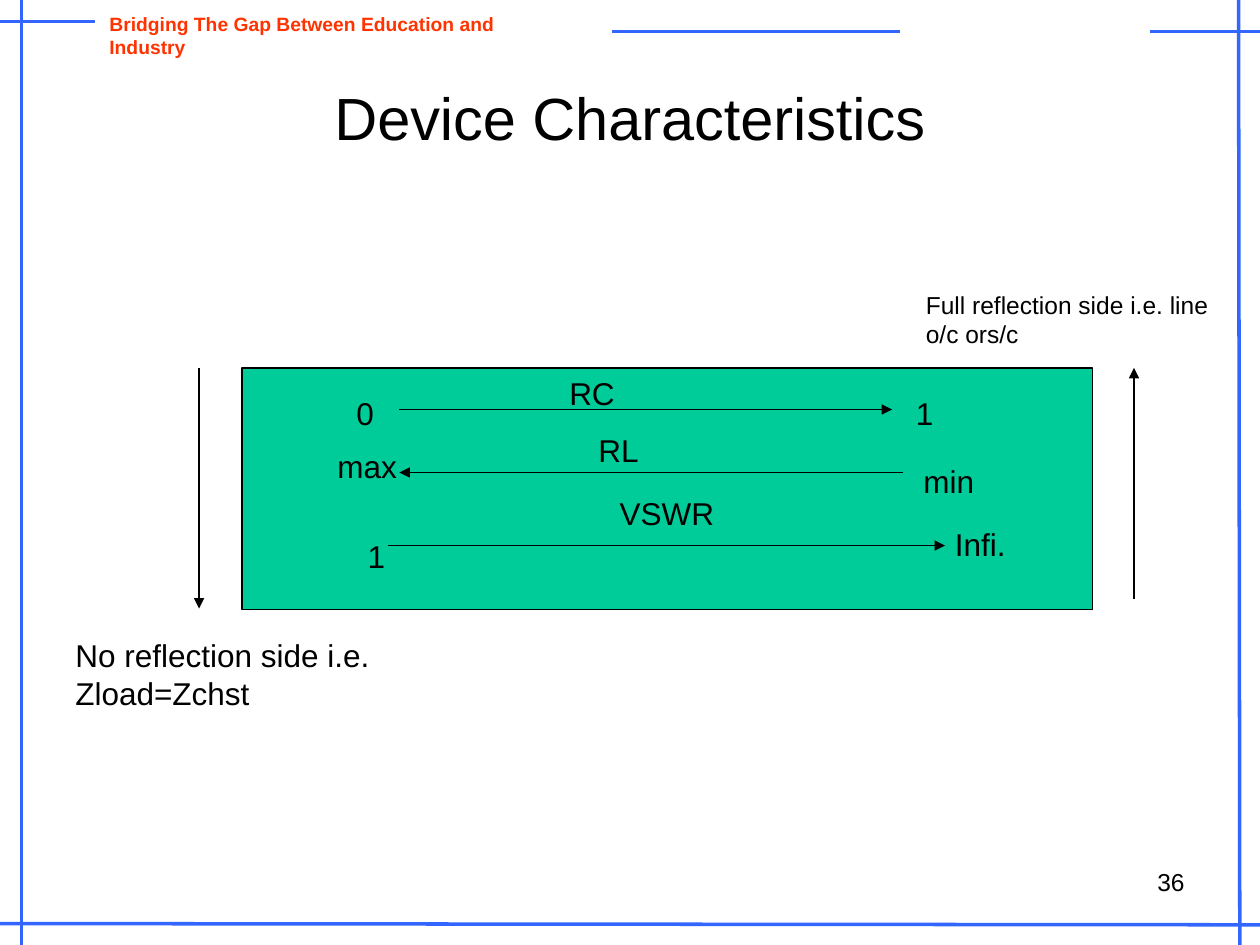
"""Build the Device Characteristics slide."""
from dataclasses import dataclass

from lxml.etree import SubElement
from pptx import Presentation
from pptx.dml.color import RGBColor
from pptx.enum.shapes import MSO_CONNECTOR as Connector, MSO_SHAPE as Preset
from pptx.enum.text import MSO_ANCHOR as Anchor, PP_ALIGN as Align
from pptx.oxml.ns import qn
from pptx.util import Inches, Pt

FONT = "Arial"
BLACK, BLUE, GREEN, RED = "000000", "3366FF", "00CC99", "FF3300"


@dataclass(frozen=True)
class Line:
    """A straight line, with an arrowhead at its end if wanted."""
    x1: float
    y1: float
    x2: float
    y2: float
    color: str = BLACK
    width: float = 0.75
    arrow: bool = True


@dataclass(frozen=True)
class Label:
    """A text box and its format."""
    text: str
    left: float
    top: float
    width: float
    height: float = 0.4
    size: float = 18
    color: str = BLACK
    bold: bool = False
    align: Align = Align.LEFT
    wrap: bool = False


def frame_line(x1: float, y1: float, x2: float, y2: float) -> Line:
    """Describe one blue line of the page frame."""
    return Line(x1, y1, x2, y2, BLUE, 2, False)


FRAME = [
    frame_line(9.13, 0.25, 10, 0.25),
    frame_line(0.17, 0, 0.17, 7.5),
    frame_line(9.83, 0, 9.84, 7.5),
    frame_line(0, 7.33, 10, 7.34),
    frame_line(0, 0.17, 0.75, 0.17),
    frame_line(7.14, 0.25, 4.86, 0.25),
]
ARROWS = [
    Line(1.58, 2.92, 1.58, 4.83),
    Line(9, 4.75, 9, 2.92),
    Line(3.17, 3.25, 7.08, 3.25),
    Line(7.17, 3.75, 3.17, 3.75),
    Line(3.08, 4.33, 7.5, 4.33),
]
LABELS = [
    Label("Bridging The Gap Between Education and Industry", 0.77, 0.05, 3.9, 0.29,
          size=11, color=RED, bold=True),
    Label("No reflection side i.e. Zload=Zchst", 0.5, 5, 2.67, 0.7, wrap=True),
    Label("Full reflection side i.e. line o/c ors/c", 7.25, 2.25, 2.5, 0.57,
          size=14, wrap=True),
    Label("RC", 4.42, 2.92, 0.56),
    Label("0", 2.73, 3.08, 0.35, wrap=True),
    Label("1", 7.17, 3.08, 0.34),
    Label("RL", 4.65, 3.37, 0.52),
    Label("max", 2.58, 3.5, 0.67),
    Label("min", 7.23, 3.62, 0.85, wrap=True),
    Label("VSWR", 4.82, 3.87, 0.95),
    Label("1", 2.82, 4.21, 0.34),
    Label("Infi.", 7.48, 4.12, 0.6),
    Label("36", 7.17, 6.83, 2.33, 0.52, size=14, align=Align.RIGHT, wrap=True),
]


def rgb(color: str) -> RGBColor:
    """Turn a hex string into a colour."""
    return RGBColor.from_string(color)


def write(frame, text: str, *, size: float, color: str = BLACK,
          bold: bool = False, align: Align = Align.LEFT) -> None:
    """Put one formatted paragraph into a text frame."""
    para = frame.paragraphs[0]
    para.alignment = align
    para.space_before = Pt(0)
    span = para.add_run()
    span.text = text
    span.font.name = FONT
    span.font.size = Pt(size)
    span.font.bold = bold
    span.font.color.rgb = rgb(color)


def draw_line(page, line: Line) -> None:
    """Draw a line or an arrow."""
    ends = (Inches(value) for value in (line.x1, line.y1, line.x2, line.y2))
    connector = page.shapes.add_connector(Connector.STRAIGHT, *ends)
    connector.line.color.rgb = rgb(line.color)
    connector.line.width = Pt(line.width)
    if line.arrow:
        SubElement(connector.line._get_or_add_ln(), qn("a:tailEnd"), type="triangle")
    SubElement(connector._element.spPr, qn("a:effectLst"))


def draw_label(page, label: Label) -> None:
    """Draw a text box."""
    box = page.shapes.add_textbox(Inches(label.left), Inches(label.top),
                                  Inches(label.width), Inches(label.height))
    box.text_frame.word_wrap = label.wrap
    write(box.text_frame, label.text, size=label.size, color=label.color,
          bold=label.bold, align=label.align)


def draw_title(page, text: str) -> None:
    """Place and fill the title placeholder."""
    title = page.shapes.title
    title.left, title.top = Inches(0.5), Inches(0.3)
    title.width, title.height = Inches(9), Inches(1.25)
    frame = title.text_frame
    frame.margin_left = frame.margin_right = 0
    frame.margin_top = frame.margin_bottom = 0
    frame.vertical_anchor = Anchor.MIDDLE
    write(frame, text, size=34, align=Align.CENTER)


def draw_panel(page) -> None:
    """Draw the green panel behind the scales."""
    panel = page.shapes.add_shape(Preset.RECTANGLE, Inches(1.92), Inches(2.92),
                                  Inches(6.75), Inches(1.92))
    panel.shadow.inherit = False
    panel.fill.solid()
    panel.fill.fore_color.rgb = rgb(GREEN)
    panel.line.color.rgb = rgb(BLACK)
    panel.line.width = Pt(0.75)


def main() -> None:
    """Build and save the deck."""
    deck = Presentation()
    deck.slide_width, deck.slide_height = Inches(10), Inches(7.5)
    page = deck.slides.add_slide(deck.slide_layouts[5])
    for line in FRAME:
        draw_line(page, line)
    draw_title(page, "Device Characteristics")
    draw_panel(page)
    for arrow in ARROWS:
        draw_line(page, arrow)
    for label in LABELS:
        draw_label(page, label)
    deck.save("out.pptx")


if __name__ == "__main__":
    main()
